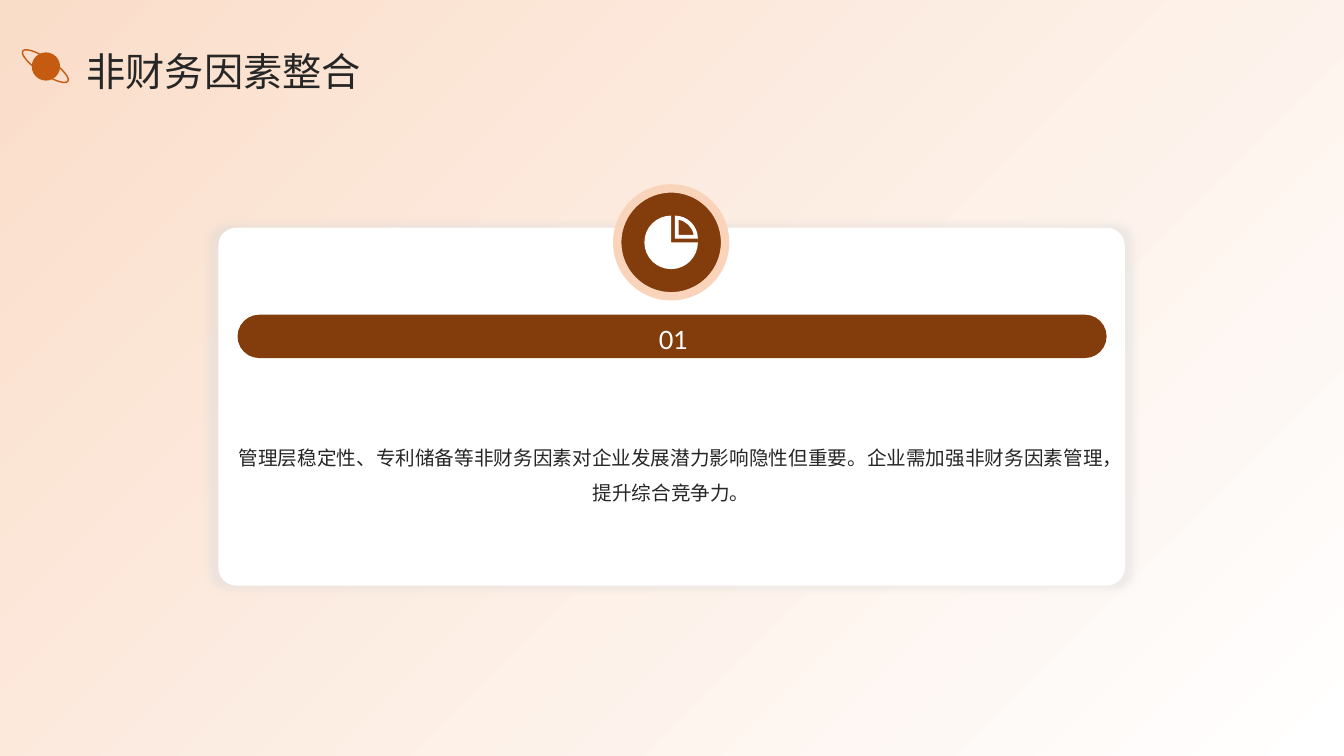
from math import cos, sin, tan, radians
from lxml.etree import SubElement as Sub
from pptx import Presentation
from pptx.dml.color import RGBColor
from pptx.enum.shapes import MSO_SHAPE as Kind
from pptx.enum.text import MSO_ANCHOR as Anchor, PP_ALIGN as Align
from pptx.oxml.ns import qn
from pptx.util import Inches, Pt

PAGE = (0, 0, 13.33, 7.5)
WHITE, INK, BROWN, RUST = "FFFFFF", "262626", "833C0B", "C55A11"
PEACH, RIM, GREY = "FADDC9", "F9D4BB", "D9D9D9"
HAN, LATIN = "Noto Sans CJK SC", "Lato"


def rgb(code):
    return RGBColor.from_string(code)


def part(box, left, top, wide, high):
    """Box inside another box, in percent of its size."""
    x, y, w, h = box
    return (x + w * left / 100, y + h * top / 100, w * wide / 100, h * high / 100)


def paint(shape, fill=None, line=None, width=1):
    shape.shadow.inherit = False
    if fill:
        shape.fill.solid()
        shape.fill.fore_color.rgb = rgb(fill)
    else:
        shape.fill.background()
    if line:
        shape.line.color.rgb = rgb(line)
        shape.line.width = Pt(width)
    else:
        shape.line.fill.background()
    return shape


def draw(shapes, kind, box, adj=None, **look):
    shape = shapes.add_shape(kind, *map(Inches, box))
    if adj is not None:
        shape.adjustments[0] = adj
    return paint(shape, **look)


def write(shapes, box, text, size, font, color, space, align=None, pad=True):
    frame = shapes.add_textbox(*map(Inches, box)).text_frame
    form = {"word_wrap": True, "vertical_anchor": Anchor.MIDDLE}
    if not pad:
        form |= {f"margin_{side}": 0 for side in ("left", "right", "top", "bottom")}
    for key, value in form.items():
        setattr(frame, key, value)
    para = frame.paragraphs[0]
    para.alignment, para.line_spacing = align, space
    run = para.add_run()
    run.text = text
    for key, value in {"size": Pt(size), "name": font}.items():
        setattr(run.font, key, value)
    run.font.color.rgb = rgb(color)
    Sub(run.font._element, qn("a:ea"), typeface=font)


def glow(shape, color, alpha, blur, scale):
    """Soft even shadow on all sides."""
    effects = shape._element.spPr.find(qn("a:effectLst"))
    size = str(scale * 1000)
    shade = Sub(effects, qn("a:outerShdw"), blurRad=str(Pt(blur)), dist="0",
                dir="0", sx=size, sy=size, algn="ctr", rotWithShape="0")
    tone = Sub(shade, qn("a:srgbClr"), val=color)
    Sub(tone, qn("a:alpha"), val=str(alpha * 1000))


def wedge(x, y, r, start, turn, count=1):
    """Centre, arc start, then three Bezier points for each of count turns."""
    def spot(angle, pull=0):
        a = radians(angle)
        return (x + r * (cos(a) - pull * sin(a)), y + r * (sin(a) + pull * cos(a)))

    pull = 4 / 3 * tan(radians(turn) / 4)
    points = [(x, y), spot(start)]
    for i in range(count):
        head = start + i * turn
        tail = head + turn
        points += [spot(head, pull), spot(tail, -pull), spot(tail)]
    return points


def bend(shape):
    """Join the lines after the first of each outline, by threes, into curves."""
    seen = 0
    for step in list(shape._element.iter(qn("a:moveTo"), qn("a:lnTo"))):
        if step.tag == qn("a:moveTo"):
            seen = 0
            continue
        if seen and seen % 3 == 1:
            curve = step
            curve.tag = qn("a:cubicBezTo")
        elif seen:
            curve.append(step[0])
            step.getparent().remove(step)
        seen += 1


def backdrop(shapes, box):
    fill = draw(shapes, Kind.RECTANGLE, box).fill
    fill.gradient()
    fill.gradient_angle = 135
    for stop, place, color in zip(fill.gradient_stops, (0, 1), (WHITE, PEACH)):
        stop.position = place
        stop.color.rgb = rgb(color)


def planet(shapes, box):
    group = shapes.add_group_shape().shapes
    draw(group, Kind.OVAL, part(box, 25, 0, 52, 100), fill=RUST)
    ring = draw(group, Kind.OVAL, part(box, 0, 22, 100, 53.6), line=RUST)
    ring.rotation = 33.8


def header(shapes, box, title):
    planet(shapes, part(box, 1.35, 6.93, 4.05, 3.73))
    write(shapes, part(box, 6.45, 5.6, 87.55, 6.8), title, 28, HAN, INK, 1.1, pad=False)


def pie(shapes, box):
    x, y, w, h = box
    hole = [(0.64, 0.36)] + wedge(0.57, 0.43, 0.36, -11, -68)[1:]
    rings = [wedge(0.5, 0.5, 0.5, 0, 90, 3), wedge(0.57, 0.43, 0.43, -90, 90), hole]
    rings = [[(Inches(x + w * u), Inches(y + h * v)) for u, v in ring] for ring in rings]
    pen = shapes.build_freeform(*rings[0][0])
    for ring in rings:
        if ring is not rings[0]:
            pen.move_to(*ring[0])
        pen.add_line_segments(ring[1:], close=True)
    shape = paint(pen.convert_to_shape(), fill=WHITE)
    bend(shape)


def card(shapes, box, number, text):
    panel = draw(shapes, Kind.ROUNDED_RECTANGLE, box, 0.05, fill=WHITE)
    glow(panel, GREY, 40, 5, 102)
    write(shapes, part(box, 2, 40.4, 95.88, 54.37), text, 14, HAN, INK, 1.5,
          Align.CENTER, pad=False)
    bar = part(box, 2.11, 24.3, 95.88, 12.11)
    draw(shapes, Kind.ROUNDED_RECTANGLE, bar, 0.5, fill=BROWN)
    write(shapes, part(bar, 2.2, 0, 95.94, 100), number, 18, LATIN, WHITE, 1.2, Align.CENTER)
    badge = part(box, 44, -10.99, 11.9, 30.14)
    draw(shapes, Kind.OVAL, badge, fill=BROWN, line=RIM, width=6)
    pie(shapes, part(badge, 25.2, 25.2, 49.6, 49.6))


def main():
    deck = Presentation()
    deck.slide_width, deck.slide_height = map(Inches, PAGE[2:])
    shapes = deck.slides.add_slide(deck.slide_layouts[6]).shapes
    backdrop(shapes, PAGE)
    card(shapes, part(PAGE, 16.25, 30.13, 67.44, 47.33), "01",
         "管理层稳定性、专利储备等非财务因素对企业发展潜力影响隐性但重要。"
         "企业需加强非财务因素管理，提升综合竞争力。")
    header(shapes, PAGE, "非财务因素整合")
    deck.save("out.pptx")


if __name__ == "__main__":
    main()
